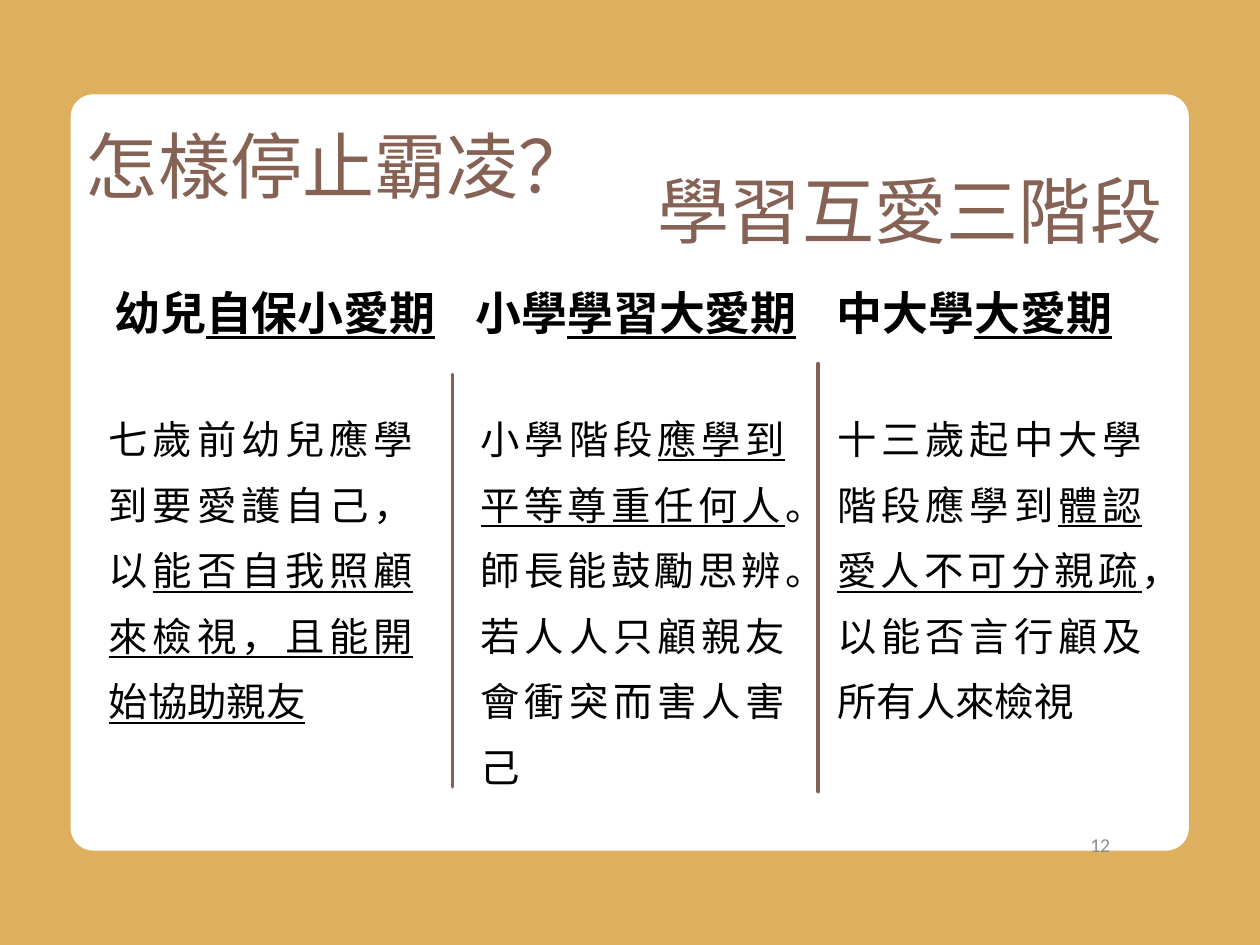
import pptx
import pptx.util
import pptx.dml.color
import pptx.enum.shapes
import pptx.enum.text
import pptx.oxml.ns
import lxml.etree
from dataclasses import dataclass

Cm = pptx.util.Cm
Pt = pptx.util.Pt
RGB = pptx.dml.color.RGBColor
Align = pptx.enum.text.PP_ALIGN
Anchor = pptx.enum.text.MSO_ANCHOR
qn = pptx.oxml.ns.qn


@dataclass(frozen=True)
class Theme:
    sand: RGB = RGB.from_string("DEAF5F")
    card: RGB = RGB.from_string("FFFFFF")
    brown: RGB = RGB.from_string("866255")
    ink: RGB = RGB.from_string("000000")
    grey: RGB = RGB.from_string("8C8C8C")
    font: str = "Noto Sans CJK JP"
    number_font: str = "Calibri"
    title: Pt = Pt(44)
    heading: Pt = Pt(28)
    body: Pt = Pt(24)
    number: Pt = Pt(12)


theme = Theme()


def write(box, marked_text, size, color, align, spacing=None, bold=False,
          font=theme.font, anchor=Anchor.TOP, inset=0):
    frame = box.text_frame
    frame.word_wrap = True
    frame.auto_size = pptx.enum.text.MSO_AUTO_SIZE.NONE
    frame.vertical_anchor = anchor
    frame.margin_left = frame.margin_right = Cm(inset)
    frame.margin_top = frame.margin_bottom = Cm(inset / 2)
    paragraph = frame.paragraphs[0]
    paragraph.alignment = align
    if spacing:
        paragraph.line_spacing = Pt(spacing)
    paragraph.font.name = font
    paragraph.font.size = size
    paragraph.font.bold = bold
    paragraph.font.color.rgb = color
    for index, part in enumerate(marked_text.split("_")):
        if part:
            run = paragraph.add_run()
            run.text = part
            if index % 2:
                run.font.underline = True
            east_asian = lxml.etree.SubElement(run.font._element, qn("a:ea"))
            east_asian.set("typeface", font)


deck = pptx.Presentation()
deck.slide_width, deck.slide_height = Cm(27.1), Cm(20.32)
slide = deck.slides.add_slide(deck.slide_layouts[5])
slide.background.fill.solid()
slide.background.fill.fore_color.rgb = theme.sand
shapes = slide.shapes

card = shapes.add_shape(pptx.enum.shapes.MSO_SHAPE.ROUNDED_RECTANGLE,
                        Cm(1.52), Cm(2.03), Cm(24.05), Cm(16.26))
card.adjustments[0] = 0.03
card.shadow.inherit = False
card.fill.solid()
card.fill.fore_color.rgb = theme.card
card.line.fill.background()

for x, top, bottom in [(9.73, 8.05, 16.92), (17.6, 7.82, 17.02)]:
    divider = shapes.add_connector(pptx.enum.shapes.MSO_CONNECTOR.STRAIGHT,
                                   Cm(x), Cm(top), Cm(x), Cm(bottom))
    divider.line.color.rgb = theme.brown
    divider.line.width = Pt(2.25)
    divider.line._get_or_add_ln().set("cap", "rnd")
    lxml.etree.SubElement(divider._element.spPr, qn("a:effectLst"))

question = shapes.title
shapes._spTree.append(question._element)
question.left, question.top = Cm(0.2), Cm(2.87)
question.width, question.height = Cm(14.17), Cm(1.68)
answer = shapes.add_textbox(Cm(12.5), Cm(3.84), Cm(14.17), Cm(1.68))
for headline, wording in [(question, "怎樣停止霸凌？"), (answer, "學習互愛三階段")]:
    write(headline, wording, theme.title, theme.brown, Align.CENTER, 45.1)

stages = [
    ("幼兒_自保小愛期_", 2.34, 6.99,
     "七歲前幼兒應學到要愛護自己，以_能否自我照顧來檢視，且能開始協助親友_"),
    ("小學_學習大愛期_", 10.34, 8.41,
     "小學階段_應學到平等尊重任何人_。師長能鼓勵思辨。若人人只顧親友會衝突而害人害己"),
    ("中大學_大愛期_", 18.01, 6.99,
     "十三歲起中大學階段應學到_體認愛人不可分親疏_，以能否言行顧及所有人來檢視"),
]
for column, (stage, left, height, lesson) in enumerate(stages):
    heading = shapes.add_textbox(Cm(2.46 + 7.77 * column), Cm(6.65), Cm(6.96), Cm(0.74))
    write(heading, stage, theme.heading, theme.ink, Align.LEFT, 18.7, bold=True)
    explanation = shapes.add_textbox(Cm(left), Cm(8.53), Cm(6.55), Cm(height))
    write(explanation, lesson, theme.body, theme.ink, Align.JUSTIFY, 40)

page_number = shapes.add_textbox(Cm(18.21), Cm(17.65), Cm(5.92), Cm(1.02))
write(page_number, "12", theme.number, theme.grey, Align.RIGHT,
      font=theme.number_font, anchor=Anchor.MIDDLE, inset=0.25)

deck.save("out.pptx")
